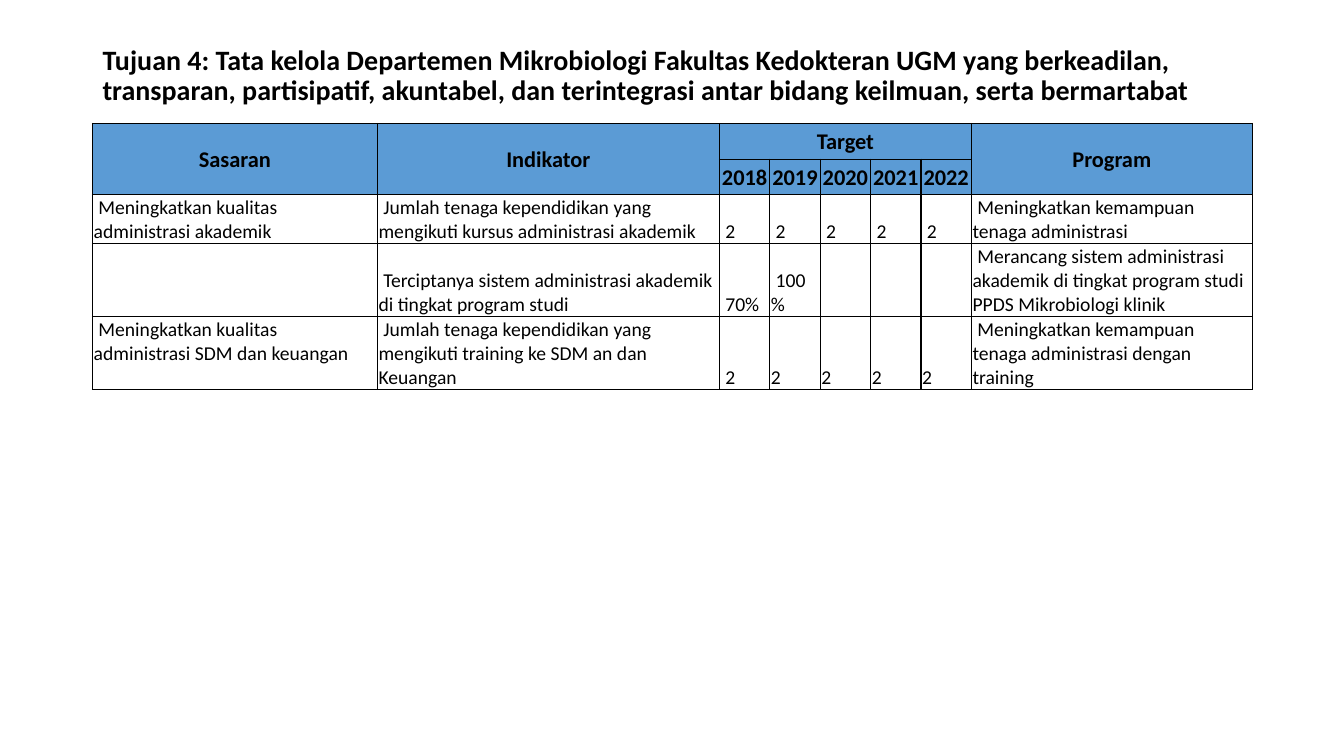
from lxml.etree import SubElement as Sub
from pptx import Presentation
from pptx.dml.color import RGBColor as Rgb
from pptx.enum.text import MSO_ANCHOR as Anchor, MSO_AUTO_SIZE as Fit, PP_ALIGN as Align
from pptx.oxml.ns import qn
from pptx.util import Cm, Pt

# Content
TITLE = (
    "Tujuan 4: Tata kelola Departemen Mikrobiologi Fakultas Kedokteran UGM yang "
    "berkeadilan, transparan, partisipatif, akuntabel, dan terintegrasi antar bidang "
    "keilmuan, serta bermartabat"
)
ROWS = [
    ["Sasaran", "Indikator", "Target", "", "", "", "", "Program"],
    ["", "", "2018", "2019", "2020", "2021", "2022", ""],
    ["Meningkatkan kualitas administrasi akademik",
     "Jumlah tenaga kependidikan yang mengikuti kursus administrasi akademik",
     "2", "2", "2", "2", "2",
     "Meningkatkan kemampuan tenaga administrasi"],
    ["", "Terciptanya sistem administrasi akademik di tingkat program studi",
     "70%", "100%", "", "", "",
     "Merancang sistem administrasi akademik di tingkat program studi "
     "PPDS Mikrobiologi klinik"],
    ["Meningkatkan kualitas administrasi SDM dan keuangan",
     "Jumlah tenaga kependidikan yang mengikuti training ke SDM an dan Keuangan",
     "2", "2", "2", "2", "2",
     "Meningkatkan kemampuan tenaga administrasi dengan training"],
]
HEAD = 2  # header rows
MERGES = [((0, 0), (1, 0)), ((0, 1), (1, 1)), ((0, 2), (0, 6)), ((0, 7), (1, 7))]
FLUSH = {(4, col) for col in range(3, 7)}  # cells with no first-line indent
TOP = {(4, 0)}  # cells set from the top

# Look
HUES = {"ink": "000000", "head": "5B9BD5"}
WIDTHS = [7.18, 8.62] + [1.27] * 5 + [7.08]
HEIGHTS = [0.9, 0.9, 1.22, 1.81, 1.81]
LEFT, WIDE = 2.33, 29.21
FONTS = {
    "title": {"name": "Calibri", "size": Pt(20), "bold": True},
    "head": {"name": "Calibri", "size": Pt(16), "bold": True},
    "body": {"name": "Calibri", "size": Pt(14), "bold": False},
}
INSETS = {"margin_left": Cm(0.03), "margin_right": Cm(0.03),
          "margin_top": Cm(0.03), "margin_bottom": 0}


def apply(item, values):
    for name, value in values.items():
        setattr(item, name, value)


def style(para, kind):
    apply(para.font, FONTS[kind])
    para.font.color.rgb = Rgb.from_string(HUES["ink"])
    for run in para.runs:
        apply(run.font, FONTS[kind])
        run.font.color.rgb = Rgb.from_string(HUES["ink"])


def border(cell):
    props = cell._tc.get_or_add_tcPr()
    for side in ("lnL", "lnR", "lnT", "lnB"):
        line = Sub(props, qn(f"a:{side}"), w=str(Pt(1)))
        fill = Sub(line, qn("a:solidFill"))
        Sub(fill, qn("a:srgbClr"), val=HUES["ink"])


def dress(cell, row, col, text):
    head = row < HEAD
    border(cell)
    apply(cell, INSETS)
    cell.text = text
    para = cell.text_frame.paragraphs[0]
    if head:
        cell.fill.solid()
        cell.fill.fore_color.rgb = Rgb.from_string(HUES["head"])
        cell.vertical_anchor = Anchor.MIDDLE
        para.alignment = Align.CENTER
    else:
        cell.fill.background()
        cell.vertical_anchor = Anchor.TOP if (row, col) in TOP else Anchor.BOTTOM
        para.alignment = Align.LEFT
        if (row, col) not in FLUSH:
            para._p.get_or_add_pPr().set("indent", str(Cm(0.12)))
    style(para, "head" if head else "body")


def main():
    deck = Presentation()
    deck.slide_width, deck.slide_height = Cm(33.87), Cm(19.05)
    slide = deck.slides.add_slide(deck.slide_layouts[5])

    # Title
    title = slide.shapes.title
    apply(title, {"left": Cm(LEFT), "top": Cm(1.02), "width": Cm(WIDE), "height": Cm(1.8)})
    frame = title.text_frame
    frame.text = TITLE
    apply(frame, {"word_wrap": True, "auto_size": Fit.NONE, "vertical_anchor": Anchor.MIDDLE})
    para = frame.paragraphs[0]
    apply(para, {"alignment": Align.LEFT, "line_spacing": 0.9})
    style(para, "title")

    # Table
    table = slide.shapes.add_table(len(ROWS), len(WIDTHS), Cm(LEFT), Cm(3.11),
                                   Cm(WIDE), Cm(sum(HEIGHTS))).table
    for column, width in zip(table.columns, WIDTHS):
        column.width = Cm(width)
    for line, height in zip(table.rows, HEIGHTS):
        line.height = Cm(height)
    for row, texts in enumerate(ROWS):
        for col, text in enumerate(texts):
            dress(table.cell(row, col), row, col, text)
    for first, last in MERGES:
        table.cell(*first).merge(table.cell(*last))

    deck.save("out.pptx")


if __name__ == "__main__":
    main()
